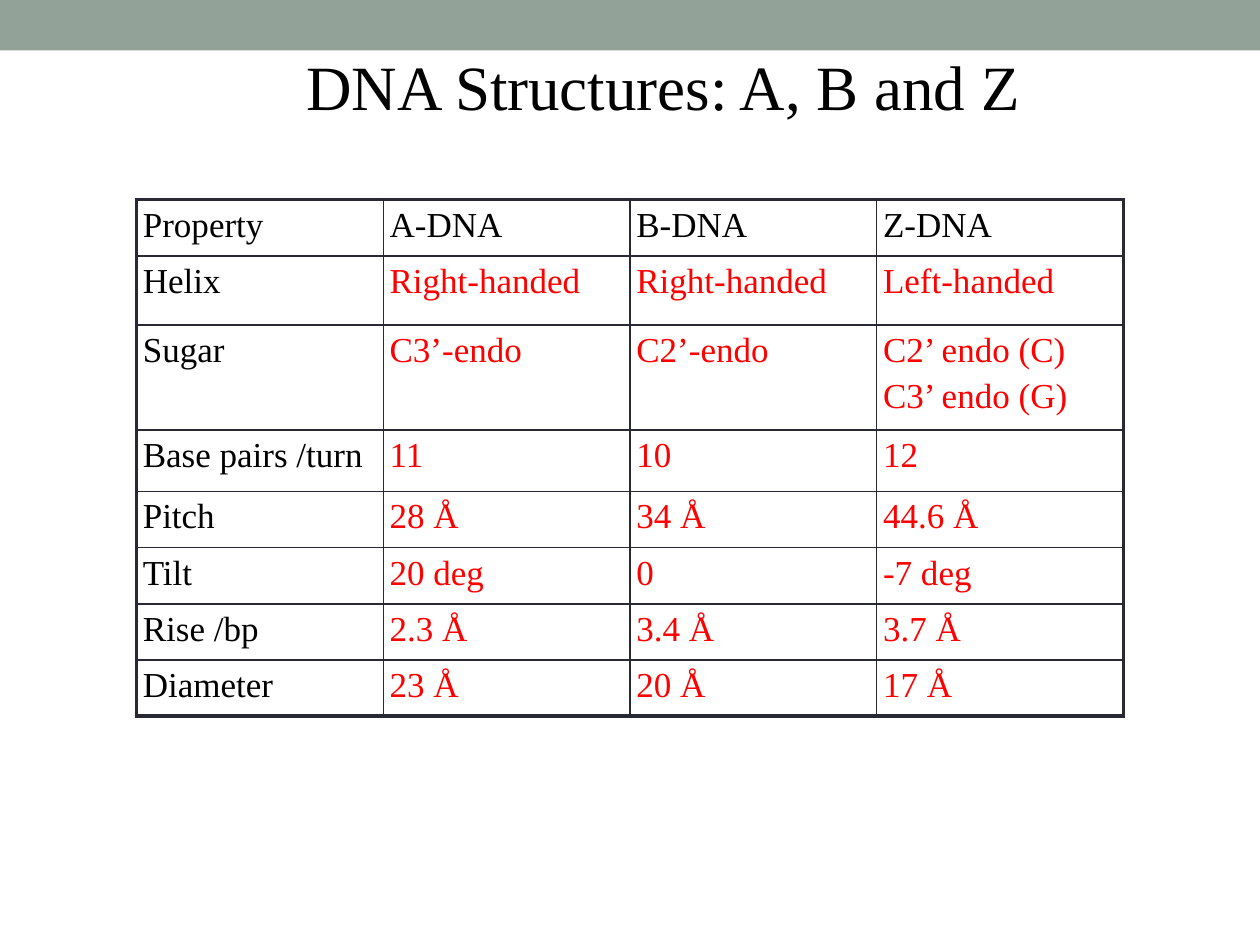
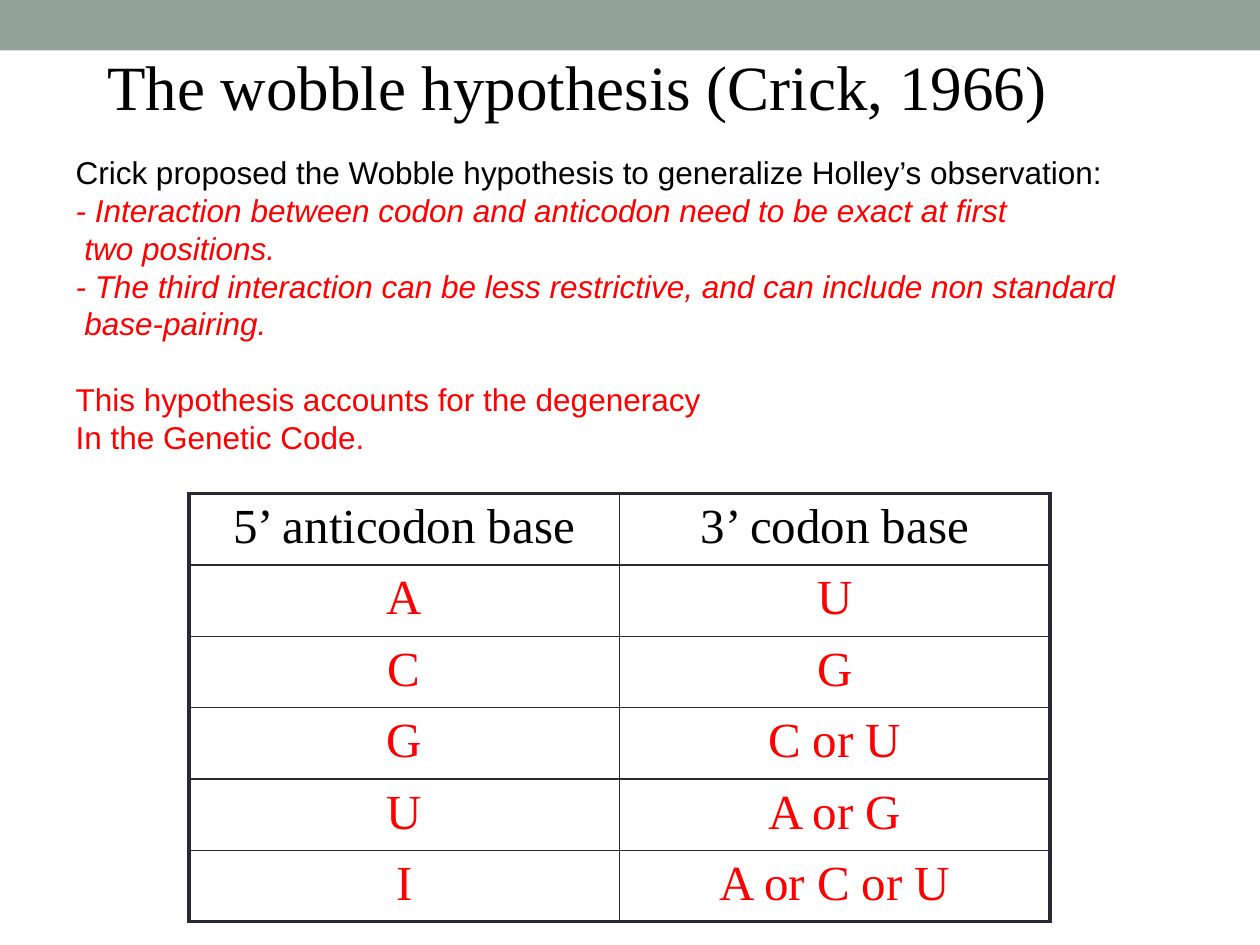
from dataclasses import dataclass

import pptx
import pptx.dml.color
import pptx.enum.shapes
import pptx.enum.text
import pptx.oxml
import pptx.oxml.ns
import pptx.util
from lxml import etree

Pt = pptx.util.Pt
ALIGN = pptx.enum.text.PP_ALIGN
ANCHOR = pptx.enum.text.MSO_ANCHOR


@dataclass(frozen=True)
class Theme:
    """Colours, fonts, type sizes and spacing shared by the slides."""

    band: str = "93A299"
    ink: str = "000000"
    accent: str = "FF0000"
    border: str = "292934"
    serif: str = "Times New Roman"
    sans: str = "Arial"
    title_size: float = 36
    body_size: float = 18
    property_size: float = 20
    wobble_size: float = 28
    inset: float = 3.6
    outer_line: float = 2.25
    inner_line: float = 1


THEME = Theme()

DNA_ROWS = [
    ("Property", "A-DNA", "B-DNA", "Z-DNA"),
    ("Helix", "Right-handed", "Right-handed", "Left-handed"),
    ("Sugar", "C3’-endo", "C2’-endo", "C2’ endo (C)\nC3’ endo (G)"),
    ("Base pairs /turn", "11", "10", "12"),
    ("Pitch", "28 Å", "34 Å", "44.6 Å"),
    ("Tilt", "20 deg", "0", "-7 deg"),
    ("Rise /bp", "2.3 Å", "3.4 Å", "3.7 Å"),
    ("Diameter", "23 Å", "20 Å", "17 Å"),
]
DNA_HEIGHTS = [32.2, 39.6, 60, 35, 32.2, 32.2, 32.2, 31.8]

WOBBLE_ROWS = [
    ("5’ anticodon base", "3’ codon base"),
    ("A", "U"),
    ("C", "G"),
    ("G", "C or U"),
    ("U", "A or G"),
    ("I", "A or C or U"),
]

SPACE_WIDTH = 5
LINE_GAP = 21.6
HYPOTHESIS = [
    ("Crick proposed the Wobble hypothesis to generalize Holley’s observation:", THEME.ink, False, 0, 0),
    ("- Interaction between codon and anticodon need to be exact at first", THEME.accent, True, 0, 0),
    ("two positions.", THEME.accent, True, SPACE_WIDTH, 0),
    ("- The third interaction can be less restrictive, and can include non standard", THEME.accent, True, 0, 0),
    ("base-pairing.", THEME.accent, True, SPACE_WIDTH, 0),
    ("This hypothesis accounts for the degeneracy", THEME.accent, False, 0, LINE_GAP),
    ("In the Genetic Code.", THEME.accent, False, 0, 0),
]


def rgb(color):
    """Return a colour object for a hex string."""
    return pptx.dml.color.RGBColor.from_string(color)


def style_paragraph(paragraph, font_name, size, color, before=0, align=ALIGN.LEFT, italic=False):
    """Format a paragraph and all its runs."""
    paragraph.alignment = align
    paragraph.line_spacing = 1.0
    paragraph.space_before = Pt(before)
    for run in paragraph.runs:
        run.font.name = font_name
        run.font.size = Pt(size)
        run.font.color.rgb = rgb(color)
        run.font.bold = False
        run.font.italic = italic


def set_insets(frame):
    """Give a text frame or a cell the shared margins."""
    frame.margin_left = frame.margin_right = Pt(THEME.inset)
    frame.margin_top = frame.margin_bottom = Pt(THEME.inset)


def place(shape, left, top, width, height):
    """Position a shape in points."""
    shape.left, shape.top = Pt(left), Pt(top)
    shape.width, shape.height = Pt(width), Pt(height)


def add_band(slide):
    """Draw the band along the top of a slide."""
    band = slide.shapes.add_shape(
        pptx.enum.shapes.MSO_SHAPE.RECTANGLE, Pt(0), Pt(0), Pt(720), Pt(28.8)
    )
    band.shadow.inherit = False
    band.fill.solid()
    band.fill.fore_color.rgb = rgb(THEME.band)
    band.line.fill.background()


def set_title(slide, text, left, width):
    """Fill and place the title placeholder."""
    title = slide.shapes.title
    place(title, left, 23.8, width, 47.5)
    frame = title.text_frame
    frame.text = text
    frame.word_wrap = False
    frame.auto_size = pptx.enum.text.MSO_AUTO_SIZE.SHAPE_TO_FIT_TEXT
    frame.vertical_anchor = ANCHOR.TOP
    set_insets(frame)
    style_paragraph(frame.paragraphs[0], THEME.serif, THEME.title_size, THEME.ink)


def remove_bullet(paragraph, indent):
    """Turn the bullet off and set the left indent."""
    properties = paragraph._p.get_or_add_pPr()
    properties.set("marL", str(Pt(indent)))
    properties.set("indent", "0")
    etree.SubElement(properties, pptx.oxml.ns.qn("a:buNone"))


def fill_body(slide, lines, left, top, width, height):
    """Fill and place the body placeholder."""
    body = slide.placeholders[1]
    place(body, left, top, width, height)
    frame = body.text_frame
    frame.text = "\n".join(line[0] for line in lines)
    frame.word_wrap = True
    frame.auto_size = pptx.enum.text.MSO_AUTO_SIZE.NONE
    frame.vertical_anchor = ANCHOR.TOP
    set_insets(frame)
    for paragraph, (_, color, italic, indent, before) in zip(frame.paragraphs, lines):
        style_paragraph(paragraph, THEME.sans, THEME.body_size, color, before, italic=italic)
        remove_bullet(paragraph, indent)


def set_borders(cell, outer_sides):
    """Draw the four borders of a cell, heavier on its outer sides."""
    properties = cell._tc.get_or_add_tcPr()
    for index, side in enumerate("LRTB"):
        weight = THEME.outer_line if side in outer_sides else THEME.inner_line
        line = pptx.oxml.parse_xml(
            f'<a:ln{side} {pptx.oxml.ns.nsdecls("a")} w="{Pt(weight)}">'
            f'<a:solidFill><a:srgbClr val="{THEME.border}"/></a:solidFill></a:ln{side}>'
        )
        properties.insert(index, line)


def add_grid(slide, rows, left, top, width, heights, size, before, align, label_column):
    """Add a bordered table with black labels and accented values."""
    column_count = len(rows[0])
    frame = slide.shapes.add_table(
        len(rows), column_count, Pt(left), Pt(top), Pt(width), Pt(sum(heights))
    )
    table = frame.table
    table.first_row = table.horz_banding = False
    for column in table.columns:
        column.width = Pt(width / column_count)
    for row_index, (texts, height) in enumerate(zip(rows, heights)):
        table.rows[row_index].height = Pt(height)
        for column_index, text in enumerate(texts):
            cell = table.cell(row_index, column_index)
            cell.fill.background()
            set_insets(cell)
            is_label = row_index == 0 or (label_column and column_index == 0)
            color = THEME.ink if is_label else THEME.accent
            cell.text_frame.text = text
            for paragraph in cell.text_frame.paragraphs:
                style_paragraph(paragraph, THEME.serif, size, color, before, align)
            edges = {
                "L": column_index == 0,
                "R": column_index == column_count - 1,
                "T": row_index == 0,
                "B": row_index == len(rows) - 1,
            }
            set_borders(cell, [side for side, is_outer in edges.items() if is_outer])


def build_structures_slide(slide):
    """Compare the three DNA forms."""
    add_band(slide)
    set_title(slide, "DNA Structures: A, B and Z", 171.4, 416)
    add_grid(
        slide, DNA_ROWS, 78, 114, 564, DNA_HEIGHTS,
        THEME.property_size, 4, ALIGN.LEFT, label_column=True,
    )


def build_wobble_slide(slide):
    """Explain the wobble hypothesis and its base pairs."""
    add_band(slide)
    set_title(slide, "The wobble hypothesis (Crick, 1966)", 57.6, 545)
    add_grid(
        slide, WOBBLE_ROWS, 108, 282, 492, [40.8] * len(WOBBLE_ROWS),
        THEME.wobble_size, 6, ALIGN.CENTER, label_column=False,
    )
    fill_body(slide, HYPOTHESIS, 39.6, 84, 606, 202)


def main():
    """Build and save the presentation."""
    presentation = pptx.Presentation()
    presentation.slide_width, presentation.slide_height = Pt(720), Pt(540)
    layouts = presentation.slide_layouts
    build_structures_slide(presentation.slides.add_slide(layouts.get_by_name("Title Only")))
    build_wobble_slide(presentation.slides.add_slide(layouts.get_by_name("Title and Content")))
    presentation.save("out.pptx")


if __name__ == "__main__":
    main()
